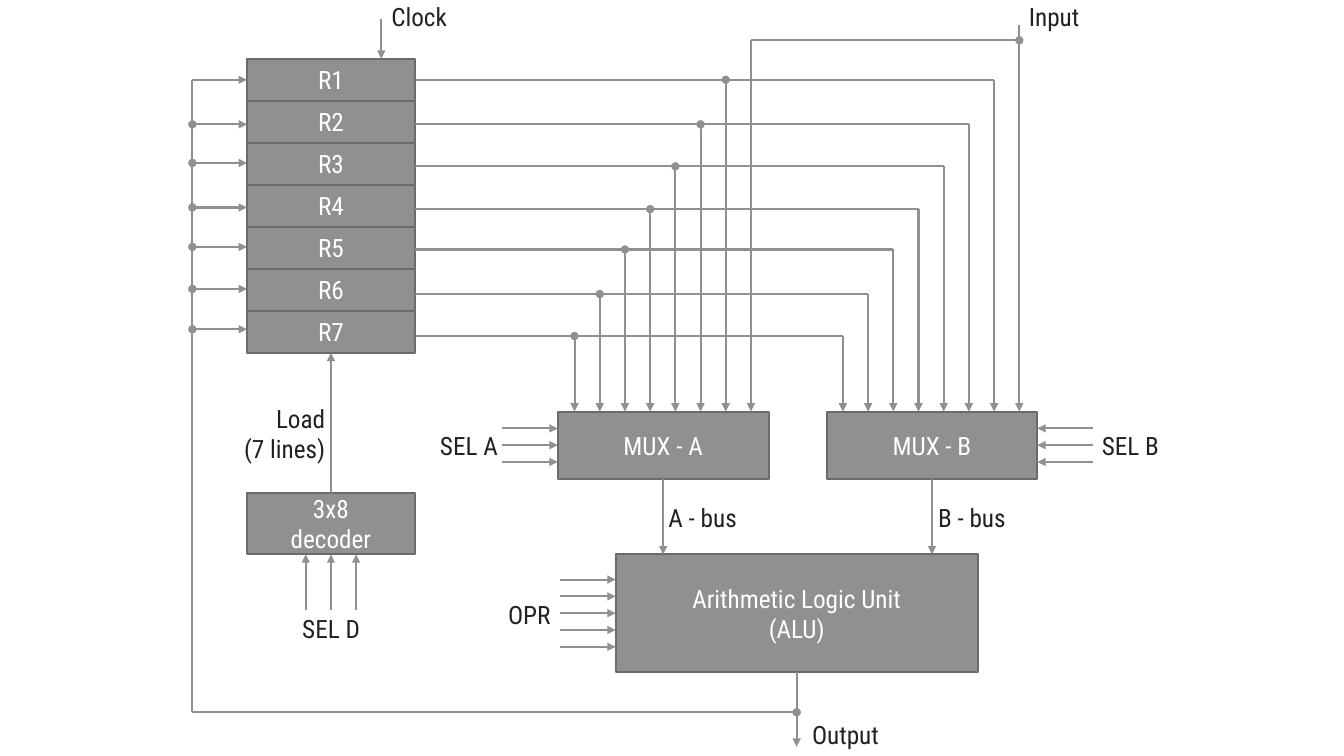
from lxml.etree import SubElement
from pptx import Presentation
from pptx.dml.color import RGBColor
from pptx.enum.shapes import MSO_CONNECTOR, MSO_SHAPE
from pptx.enum.text import MSO_ANCHOR, MSO_AUTO_SIZE, PP_ALIGN
from pptx.oxml.ns import qn
from pptx.util import Inches, Pt

# Content: all lengths are cells of a 160 x 90 grid, 12 cells to the inch
COLORS = {"block": "909090", "edge": "6B6B6B", "wire": "909090",
          "label": "212121", "block_text": "FFFFFF"}
FONT = "Roboto Condensed"
COLUMNS, ROWS = 160, 90

REGISTERS = ["R1", "R2", "R3", "R4", "R5", "R6", "R7"]
OUTPUT_ROWS = [9.5, 14.8, 19.8, 24.9, 29.7, 35, 40]
FEEDBACK_ROWS = [9.5, 14.8, 19.4, 24.7, 29.4, 34.4, 39.2]
REGISTER_LEFT, REGISTER_TOP, REGISTER_WIDTH, REGISTER_HEIGHT = 29.4, 7, 20, 5

# Block: lines of text, left, top, width, height
UNITS = {
    "mux_a": (["MUX - A"], 66.4, 49, 25.1, 8),
    "mux_b": (["MUX - B"], 98.4, 49, 25.1, 8),
    "alu": (["Arithmetic Logic Unit", "(ALU)"], 73.3, 66, 43.1, 14),
    "decoder": (["3x8", "decoder"], REGISTER_LEFT, 58.7, REGISTER_WIDTH, 7.3),
}

# Label: lines of text, left, top, width, alignment
LABELS = [
    (["Clock"], 45.4, -0.4, 10, PP_ALIGN.LEFT),
    (["Input"], 121.3, -0.4, 10, PP_ALIGN.LEFT),
    (["Output"], 95.5, 85, 12, PP_ALIGN.LEFT),
    (["SEL B"], 130, 50.6, 10, PP_ALIGN.LEFT),
    (["SEL A"], 51.2, 50.6, 10, PP_ALIGN.LEFT),
    (["SEL D"], 34.8, 72.4, 10, PP_ALIGN.LEFT),
    (["OPR"], 59.3, 70.8, 10, PP_ALIGN.LEFT),
    (["Load", "(7 lines)"], 27.1, 47.4, 12.8, PP_ALIGN.RIGHT),
    (["A - bus"], 78.4, 59.2, 12, PP_ALIGN.LEFT),
    (["B - bus"], 110.5, 59.2, 12, PP_ALIGN.LEFT),
]

INPUT_A, INPUT_B = 89.4, 121.35   # columns of the external input
PIN_PITCH = 3
INPUT_TOP, INPUT_BRANCH = 3, 4.8
CLOCK_COLUMN, CLOCK_TOP = 45.4, 2.3
FEEDBACK_COLUMN, FEEDBACK_BOTTOM = 22.9, 84.8
OUTPUT_BOTTOM = 88.9
STUB, STUB_PITCH = 6.6, 2

presentation = Presentation()
presentation.slide_width = Inches(COLUMNS / 12)
presentation.slide_height = Inches(ROWS / 12)
slide = presentation.slides.add_slide(presentation.slide_layouts[6])
joints = []   # block, side number, column, row


def cells(*lengths):
    return [Inches(length / 12) for length in lengths]


def write(frame, lines, color, alignment):
    for number, line in enumerate(lines):
        paragraph = frame.add_paragraph() if number else frame.paragraphs[0]
        paragraph.alignment = alignment
        run = paragraph.add_run()
        run.text = line
        run.font.size = Pt(18)
        run.font.name = FONT
        run.font.color.rgb = RGBColor.from_string(COLORS[color])


def add_block(lines, left, top, width, height):
    block = slide.shapes.add_shape(MSO_SHAPE.RECTANGLE,
                                   *cells(left, top, width, height))
    block.shadow.inherit = False
    block.fill.solid()
    block.fill.fore_color.rgb = RGBColor.from_string(COLORS["block"])
    block.line.color.rgb = RGBColor.from_string(COLORS["edge"])
    block.line.width = Pt(1.5)
    block.text_frame.vertical_anchor = MSO_ANCHOR.MIDDLE
    write(block.text_frame, lines, "block_text", PP_ALIGN.CENTER)
    middle, center = left + width / 2, top + height / 2
    sides = [(middle, top), (left, center), (middle, top + height),
             (left + width, center)]
    joints.extend((block, side, *spot) for side, spot in enumerate(sides))


def add_wire(x1, y1, x2, y2, head=None, tail="triangle"):
    wire = slide.shapes.add_connector(MSO_CONNECTOR.STRAIGHT,
                                      *cells(x1, y1, x2, y2))
    wire.line.color.rgb = RGBColor.from_string(COLORS["wire"])
    wire.line.width = Pt(1.5)
    outline = wire.line._get_or_add_ln()
    for tag, ending in (("a:headEnd", head), ("a:tailEnd", tail)):
        if ending:
            SubElement(outline, qn(tag), type=ending)
    SubElement(wire._element.spPr, qn("a:effectLst"))
    # Join ends that meet the middle of a block's side
    for x, y, join in ((x1, y1, wire.begin_connect), (x2, y2, wire.end_connect)):
        for block, side, column, row in joints:
            if abs(x - column) < 0.06 and abs(y - row) < 0.06:
                join(block, side)
                break


def spread(center, count, pitch):
    return [center + (i - (count - 1) / 2) * pitch for i in range(count)]


# Registers and units
for index, register in enumerate(REGISTERS):
    add_block([register], REGISTER_LEFT, REGISTER_TOP + index * REGISTER_HEIGHT,
              REGISTER_WIDTH, REGISTER_HEIGHT)
for unit in UNITS.values():
    add_block(*unit)

# Buses, output, clock and load
mux_top = UNITS["mux_a"][2]
alu_left, alu_top, alu_width, alu_height = UNITS["alu"][1:]
alu_middle, alu_bottom = alu_left + alu_width / 2, alu_top + alu_height
for mux in ("mux_a", "mux_b"):
    _, left, top, width, height = UNITS[mux]
    add_wire(left + width / 2, top + height, left + width / 2, alu_top)
add_wire(alu_middle, alu_bottom, alu_middle, OUTPUT_BOTTOM)
add_wire(CLOCK_COLUMN, CLOCK_TOP, CLOCK_COLUMN, REGISTER_TOP)
register_middle = REGISTER_LEFT + REGISTER_WIDTH / 2
register_bottom = REGISTER_TOP + len(REGISTERS) * REGISTER_HEIGHT
decoder_top, decoder_height = UNITS["decoder"][2], UNITS["decoder"][4]
add_wire(register_middle, decoder_top, register_middle, register_bottom)

# External input to both multiplexers
add_wire(INPUT_B, INPUT_TOP, INPUT_B, mux_top)
add_wire(INPUT_A, INPUT_BRANCH, INPUT_A, mux_top)
add_wire(INPUT_A, INPUT_BRANCH, INPUT_B, INPUT_BRANCH, tail="oval")

# Register outputs, one pin further left for each register
for index, row in enumerate(OUTPUT_ROWS, start=1):
    pin_a, pin_b = INPUT_A - index * PIN_PITCH, INPUT_B - index * PIN_PITCH
    add_wire(REGISTER_LEFT + REGISTER_WIDTH, row, pin_b, row, tail=None)
    add_wire(pin_b, row, pin_b, mux_top)
    add_wire(pin_a, row, pin_a, mux_top, head="oval")

# Feedback from the output to the registers
add_wire(FEEDBACK_COLUMN, FEEDBACK_BOTTOM, FEEDBACK_COLUMN, FEEDBACK_ROWS[0], tail=None)
add_wire(FEEDBACK_COLUMN, FEEDBACK_BOTTOM, alu_middle, FEEDBACK_BOTTOM, tail="oval")
for index, row in enumerate(FEEDBACK_ROWS):
    add_wire(FEEDBACK_COLUMN, row, REGISTER_LEFT, row, head="oval" if index else None)

# Select and operation lines
_, mux_a_left, _, mux_width, mux_height = UNITS["mux_a"]
mux_b_right = UNITS["mux_b"][1] + mux_width
for row in spread(mux_top + mux_height / 2, 3, STUB_PITCH):
    add_wire(mux_a_left - STUB, row, mux_a_left, row)
    add_wire(mux_b_right + STUB, row, mux_b_right, row)
for row in spread(alu_top + alu_height / 2, 5, STUB_PITCH):
    add_wire(alu_left - STUB, row, alu_left, row)
decoder_bottom = decoder_top + decoder_height
for column in spread(register_middle, 3, PIN_PITCH):
    add_wire(column, decoder_bottom + STUB, column, decoder_bottom)

# Labels
for lines, left, top, width, alignment in LABELS:
    label = slide.shapes.add_textbox(
        *cells(left, top, width, 1.2 + 3.65 * len(lines)))
    label.text_frame.word_wrap = True
    label.text_frame.auto_size = MSO_AUTO_SIZE.SHAPE_TO_FIT_TEXT
    write(label.text_frame, lines, "label", alignment)

presentation.save("out.pptx")
